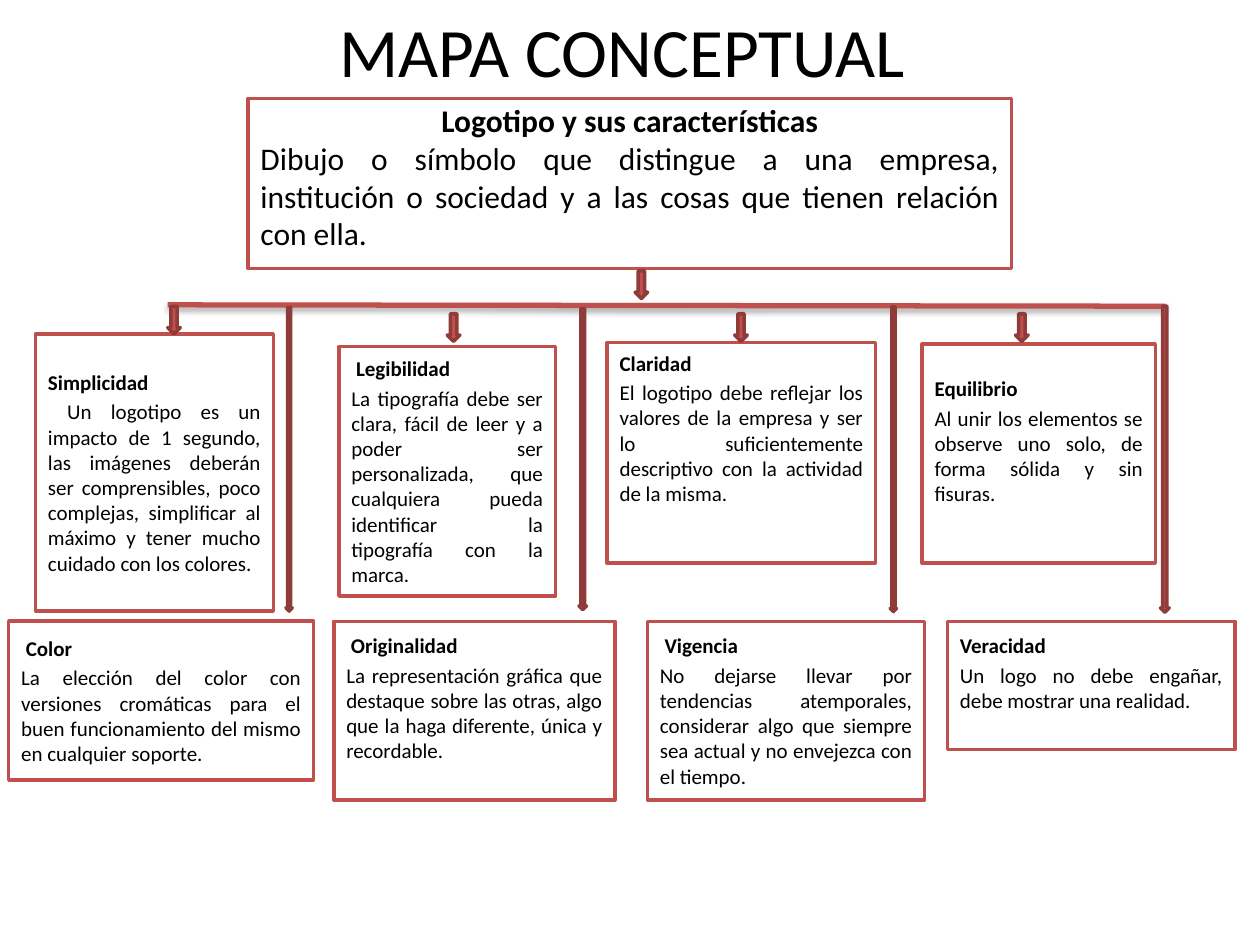
"""Build a concept map slide about logos and their characteristics."""
from lxml.etree import SubElement
from pptx import Presentation
from pptx.dml.color import RGBColor
from pptx.enum.shapes import MSO_CONNECTOR, MSO_SHAPE
from pptx.enum.text import MSO_ANCHOR, MSO_AUTO_SIZE, PP_ALIGN
from pptx.oxml.ns import qn
from pptx.util import Pt


def color(hex_code):
    return RGBColor.from_string(hex_code)


def apply(target, values):
    for name, value in values.items():
        setattr(target, name, value)


class ConceptMap:
    RED, DARK_RED, WHITE, BLACK = "C0504D", "8E3B39", "FFFFFF", "000000"
    FONT = "Calibri"

    def __init__(self, slide):
        self.slide = slide

    def place(self, part, left, top, width, height):
        apply(part, {"left": Pt(left), "top": Pt(top),
                     "width": Pt(width), "height": Pt(height)})

    def paint(self, part, fill, line):
        part.fill.solid()
        part.fill.fore_color.rgb = color(fill)
        part.line.color.rgb = color(line)
        part.line.width = Pt(2)

    def paragraph(self, paragraph, text, size, bold=False,
                  align=PP_ALIGN.JUSTIFY, before=0):
        paragraph.text = text
        properties = paragraph._p.get_or_add_pPr()
        properties.set("marL", "0")
        properties.set("indent", "0")
        SubElement(properties, qn("a:buNone"))
        apply(paragraph, {"alignment": align, "space_before": Pt(before)})
        apply(paragraph.font, {"name": self.FONT, "size": Pt(size), "bold": bold})
        paragraph.font.color.rgb = color(self.BLACK)

    def title(self, text, bounds):
        heading = self.slide.shapes.title
        self.place(heading, *bounds)
        apply(heading.text_frame, {"auto_size": MSO_AUTO_SIZE.NONE,
                                   "vertical_anchor": MSO_ANCHOR.MIDDLE})
        self.paragraph(heading.text_frame.paragraphs[0], text, 39.6,
                       align=PP_ALIGN.CENTER)

    def card(self, bounds, heading, body, size=12, before=2.4, part=None,
             heading_align=PP_ALIGN.JUSTIFY, **frame_values):
        if part is None:
            part = self.slide.shapes.add_shape(MSO_SHAPE.RECTANGLE, 0, 0, 0, 0)
            part.shadow.inherit = False
        self.place(part, *bounds)
        self.paint(part, self.WHITE, self.RED)
        frame = part.text_frame
        apply(frame, {"word_wrap": True, "auto_size": MSO_AUTO_SIZE.NONE,
                      "vertical_anchor": MSO_ANCHOR.MIDDLE, **frame_values})
        self.paragraph(frame.paragraphs[0], heading, size, True, heading_align)
        self.paragraph(frame.add_paragraph(), body, size, before=before)

    def down_arrow(self, center_x, center_y, length, thickness):
        arrow = self.slide.shapes.add_shape(
            MSO_SHAPE.RIGHT_ARROW, Pt(center_x - length / 2),
            Pt(center_y - thickness / 2), Pt(length), Pt(thickness))
        arrow.rotation = 90
        arrow.shadow.inherit = False
        self.paint(arrow, self.RED, self.DARK_RED)

    def branch_line(self, *ends):
        branch = self.slide.shapes.add_connector(
            MSO_CONNECTOR.STRAIGHT, *map(Pt, ends))
        branch.line.color.rgb = color(self.RED)
        branch.line.width = Pt(3)
        effects = SubElement(branch._element.spPr, qn("a:effectLst"))
        shadow = SubElement(effects, qn("a:outerShdw"), blurRad=str(Pt(3.1)),
                            dist=str(Pt(1.8)), dir="5400000", rotWithShape="0")
        tint = SubElement(shadow, qn("a:srgbClr"), val=self.BLACK)
        SubElement(tint, qn("a:alpha"), val="35000")


LOWER_TOP = 355
CHARACTERISTICS = [
    ((193.7, 198, 123.8, 142.6), " Legibilidad",
     "La tipografía debe ser clara, fácil de leer y a poder ser personalizada, "
     "que cualquiera pueda identificar la tipografía con la marca.", 3.6),
    ((347, 195.8, 153.4, 126), "Claridad",
     "El logotipo debe reflejar los valores de la empresa y ser lo "
     "suficientemente descriptivo con la actividad de la misma.", 32),
    ((527, 196.6, 133.2, 125.3), "Equilibrio",
     "Al unir los elementos se observe uno solo, de forma sólida y sin fisuras.",
     18),
    ((5, LOWER_TOP, 174.2, 90.7), " Color",
     "La elección del color con versiones cromáticas para el buen "
     "funcionamiento del mismo en cualquier soporte.", 3.6),
    ((190.8, LOWER_TOP, 160.6, 102.2), " Originalidad",
     "La representación gráfica que destaque sobre las otras, algo que la haga "
     "diferente, única y recordable.", 18),
    ((370, LOWER_TOP, 158.4, 102.2), " Vigencia",
     "No dejarse llevar por tendencias atemporales, considerar algo que siempre "
     "sea actual y no envejezca con el tiempo.", 3.6),
    ((541.4, LOWER_TOP, 164.2, 73.4), "Veracidad",
     "Un logo no debe engañar, debe mostrar una realidad.", 18),
]
LONG_ARROWS = [(165.2, 173.5, 3.6), (333, 172, 4.3),
               (510.5, 174.2, 3.6), (665.6, 175, 5)]
SHORT_ARROWS = [(99.4, 182.9), (259.2, 187.2), (423.4, 187.2),
                (583.9, 187.2), (366.5, 162.7)]


def main():
    deck = Presentation()
    apply(deck, {"slide_width": Pt(720), "slide_height": Pt(540)})
    slide = deck.slides.add_slide(deck.slide_layouts[1])
    concept_map = ConceptMap(slide)
    concept_map.title("MAPA CONCEPTUAL ", (36, 0.7, 648, 55.4))
    concept_map.card(
        (141.8, 56.2, 436.3, 97.2), "Logotipo y sus características",
        "Dibujo o símbolo que distingue a una empresa, institución o sociedad "
        "y a las cosas que tienen relación con ella.",
        size=18, before=0, heading_align=PP_ALIGN.CENTER,
        vertical_anchor=MSO_ANCHOR.TOP, margin_top=Pt(1.5))
    concept_map.card(
        (20.2, 190.8, 136, 158.4), "Simplicidad",
        " Un logotipo es un impacto de 1 segundo, las imágenes deberán ser "
        "comprensibles, poco complejas, simplificar al máximo y tener mucho "
        "cuidado con los colores.", part=slide.placeholders[1])
    for bounds, heading, body, bottom in CHARACTERISTICS:
        concept_map.card(bounds, heading, body, margin_bottom=Pt(bottom))
    concept_map.branch_line(95.8, 174.2, 666, 175)
    for center_x, length, thickness in LONG_ARROWS:
        concept_map.down_arrow(center_x, 262.4, length, thickness)
    for center_x, center_y in SHORT_ARROWS:
        concept_map.down_arrow(center_x, center_y, 15.8, 7.2)
    deck.save("out.pptx")


if __name__ == "__main__":
    main()
